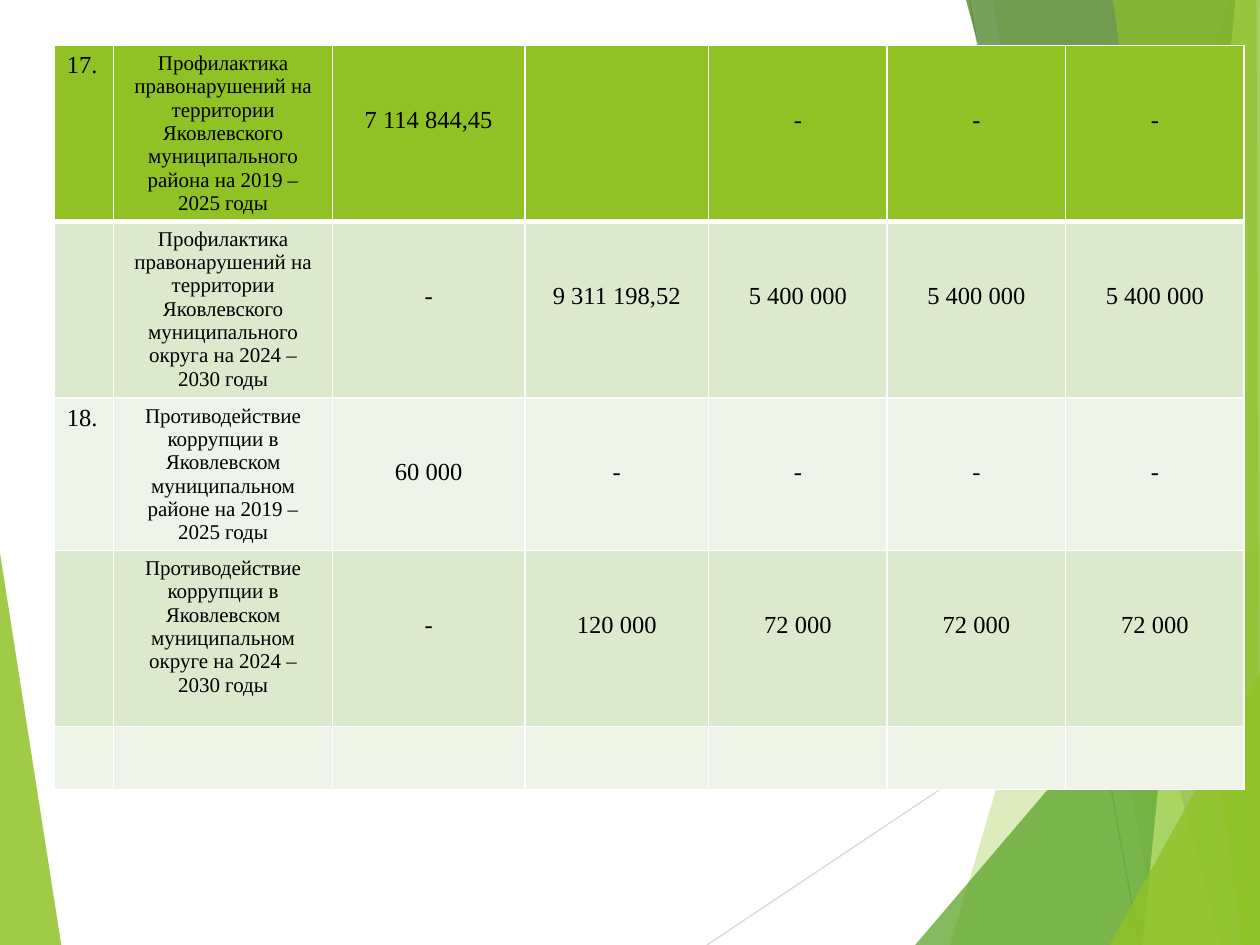
from lxml.etree import SubElement
from pptx import Presentation
from pptx.dml.color import RGBColor
from pptx.enum.shapes import MSO_CONNECTOR
from pptx.enum.text import MSO_ANCHOR, PP_ALIGN
from pptx.oxml.ns import qn
from pptx.util import Pt

COLORS = {
    "lime": "90C226",
    "green": "54A021",
    "forest": "3F7819",
    "pale": "C0E474",
    "band": "DBE9CD",
    "light": "EEF4E8",
    "white": "FFFFFF",
    "black": "000000",
    "ray": "D9D9D9",
    "ray_dark": "BFBFBF",
}
FONT = "Times New Roman"
SLIDE_WIDTH, SLIDE_HEIGHT = 720, 540

RAYS = [
    ((404, 540), (720, 329), "ray"),
    ((554, 0), (651, 540), "ray_dark"),
]
LEFT_FACET = ([(0, 316), (35.2, 540), (0, 540)], "lime", 85)
RIGHT_FACETS = [
    ([(702, 0), (543, 540), (720, 540), (720, 0)], "lime", 30),
    ([(567, 0), (662, 540), (720, 540), (720, 0)], "lime", 20),
    ([(523, 540), (720, 309), (720, 540)], "green", 72),
    ([(552, 0), (698, 540), (720, 540), (720, 0)], "forest", 70),
    ([(706.5, 0), (653, 540), (720, 540), (720, 0)], "pale", 70),
    ([(636, 0), (710, 540), (720, 540), (718.5, 0)], "lime", 65),
    ([(634.5, 540), (720, 385), (720, 540)], "lime", 80),
]

COLUMN_WIDTHS = [34, 125, 110, 105, 102, 102, 102]
ROW_HEIGHTS = [100, 101, 87, 100.6, 36]
ROW_FILLS = ["lime", "band", "light", "band", "light"]
PROGRAMS = [
    ["17.", "Профилактика правонарушений на территории Яковлевского муниципального района на 2019 – 2025 годы",
     "7 114 844,45", "", "-", "-", "-"],
    ["", "Профилактика правонарушений на территории Яковлевского муниципального округа на 2024 – 2030 годы",
     "-", "9 311 198,52", "5 400 000", "5 400 000", "5 400 000"],
    ["18.", "Противодействие коррупции в Яковлевском муниципальном районе на 2019 – 2025 годы",
     "60 000", "-", "-", "-", "-"],
    ["", "Противодействие коррупции в Яковлевском муниципальном округе на 2024 – 2030 годы",
     "-", "120 000", "72 000", "72 000", "72 000"],
    [""] * 7,
]


def rgb(color):
    return RGBColor.from_string(COLORS[color])


def write_text(frame, text, size=14, align=PP_ALIGN.CENTER, color="black"):
    paragraph = frame.paragraphs[0]
    paragraph.alignment = align
    run = paragraph.add_run()
    run.text = text
    run.font.name = FONT
    run.font.size = Pt(size)
    run.font.bold = False
    run.font.color.rgb = rgb(color)


def add_facet(slide, left, top, points, color, opacity):
    corners = [(left + x, top + y) for x, y in points]
    builder = slide.shapes.build_freeform(*corners[0], scale=Pt(1))
    builder.add_line_segments(corners[1:], close=True)
    facet = builder.convert_to_shape()
    facet.shadow.inherit = False
    facet.line.fill.background()
    facet.fill.solid()
    facet.fill.fore_color.rgb = rgb(color)
    tint = facet.fill._xPr.find(f"{qn('a:solidFill')}/{qn('a:srgbClr')}")
    SubElement(tint, qn("a:alpha"), val=str(opacity * 1000))


def add_ray(slide, left, top, start, end, color):
    ray = slide.shapes.add_connector(
        MSO_CONNECTOR.STRAIGHT,
        Pt(left + start[0]), Pt(top + start[1]), Pt(left + end[0]), Pt(top + end[1]))
    ray.line.color.rgb = rgb(color)
    ray.line.width = Pt(0.75)
    SubElement(ray._element.spPr, qn("a:effectLst"))


def add_backdrop(slide, left, top):
    add_facet(slide, left, top, *LEFT_FACET)
    for ray in RAYS:
        add_ray(slide, left, top, *ray)
    for facet in RIGHT_FACETS:
        add_facet(slide, left, top, *facet)


def set_borders(cell, **widths):
    properties = cell._tc.get_or_add_tcPr()
    for position, side in enumerate(("L", "R", "T", "B")):
        border = properties.makeelement(qn(f"a:ln{side}"), {"w": str(Pt(widths.get(side, 1)))})
        fill = SubElement(border, qn("a:solidFill"))
        SubElement(fill, qn("a:srgbClr"), val=COLORS["white"])
        properties.insert(position, border)


def add_programs_table(slide, left, top):
    table = slide.shapes.add_table(
        len(ROW_HEIGHTS), len(COLUMN_WIDTHS), Pt(left), Pt(top),
        Pt(sum(COLUMN_WIDTHS)), Pt(sum(ROW_HEIGHTS))).table
    for column, width in zip(table.columns, COLUMN_WIDTHS):
        column.width = Pt(width)
    for row_index, (program, height) in enumerate(zip(PROGRAMS, ROW_HEIGHTS)):
        table.rows[row_index].height = Pt(height)
        for column_index, text in enumerate(program):
            cell = table.cell(row_index, column_index)
            cell.fill.solid()
            cell.fill.fore_color.rgb = rgb(ROW_FILLS[row_index])
            cell.vertical_anchor = MSO_ANCHOR.TOP
            set_borders(cell, T=3 if row_index == 1 else 1, B=3 if row_index == 0 else 1)
            if not text:
                continue
            if column_index > 1:
                cell.margin_top = Pt(34.8)
            write_text(
                cell.text_frame, text,
                size=12 if column_index == 1 else 14,
                align=PP_ALIGN.LEFT if column_index == 0 else PP_ALIGN.CENTER)


def main():
    presentation = Presentation()
    presentation.slide_width = Pt(SLIDE_WIDTH)
    presentation.slide_height = Pt(SLIDE_HEIGHT)
    slide = presentation.slides.add_slide(presentation.slide_layouts[6])
    add_backdrop(slide, 0, 0)
    add_programs_table(slide, 31, 26)
    presentation.save("out.pptx")


if __name__ == "__main__":
    main()
